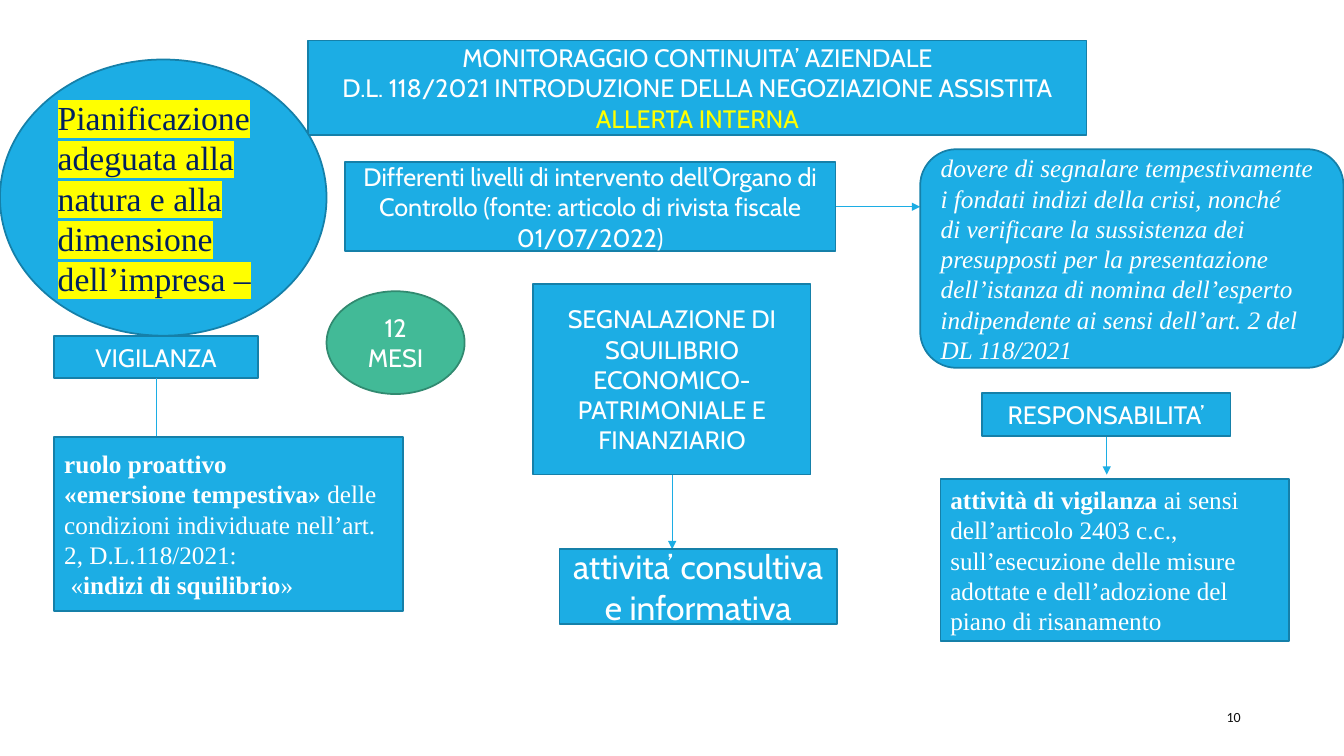
from lxml import etree
from pptx import Presentation
from pptx.dml.color import RGBColor
from pptx.enum import shapes, text
from pptx.oxml import ns
from pptx.util import Cm, Pt

BLUE = RGBColor(0x1C, 0xAD, 0xE4)
BLUE_EDGE = RGBColor(0x15, 0x80, 0xA9)
GREEN = RGBColor(0x42, 0xBA, 0x97)
GREEN_EDGE = RGBColor(0x31, 0x8A, 0x70)
WHITE = RGBColor(0xFF, 0xFF, 0xFF)
YELLOW = RGBColor(0xFF, 0xFF, 0x00)
NAVY = RGBColor(0x00, 0x20, 0x60)
INK = RGBColor(0x0D, 0x0D, 0x0D)

SANS, SERIF = "Cabin", "Times New Roman"
CENTER, LEFT = text.PP_ALIGN.CENTER, text.PP_ALIGN.LEFT
KIND = shapes.MSO_SHAPE


def write(sp, paragraphs, font=SANS, size=18, color=WHITE, align=CENTER, italic=False):
    """Each paragraph is a string, or a list of (text, bold) runs."""
    tf = sp.text_frame
    tf.word_wrap = True
    tf.auto_size = text.MSO_AUTO_SIZE.NONE
    tf.vertical_anchor = text.MSO_ANCHOR.MIDDLE
    for i, runs in enumerate(paragraphs):
        p = tf.add_paragraph() if i else tf.paragraphs[0]
        p.alignment = align
        p.font.name, p.font.size = font, Pt(size)
        p.font.italic = italic
        p.font.color.rgb = color
        for words, bold in [(runs, False)] if isinstance(runs, str) else runs:
            r = p.add_run()
            r.text = words
            if bold:
                r.font.bold = True


def paint(sp, fill=BLUE, edge=BLUE_EDGE):
    sp.fill.solid()
    sp.fill.fore_color.rgb = fill
    sp.line.color.rgb = edge
    sp.line.width = Pt(1.25)


def place(sp, box):
    sp.left, sp.top, sp.width, sp.height = map(Cm, box)


def add_box(slide, box, paragraphs, kind=KIND.RECTANGLE, fill=BLUE, edge=BLUE_EDGE, **style):
    sp = slide.shapes.add_shape(kind, *map(Cm, box))
    sp.shadow.inherit = False
    paint(sp, fill, edge)
    write(sp, paragraphs, **style)
    return sp


def add_arrow(slide, x1, y1, x2, y2):
    line = slide.shapes.add_connector(shapes.MSO_CONNECTOR.STRAIGHT, *map(Cm, (x1, y1, x2, y2)))
    line.line.color.rgb = BLUE
    line.line.width = Pt(0.75)
    etree.SubElement(line.line._get_or_add_ln(), ns.qn("a:tailEnd"), type="triangle")
    etree.SubElement(line._element.spPr, ns.qn("a:effectLst"))


def highlight(r, font_color, back):
    r.font.color.rgb = font_color
    mark = etree.Element(ns.qn("a:highlight"))
    etree.SubElement(mark, ns.qn("a:srgbClr"), val=str(back))
    r.font._element.find(ns.qn("a:solidFill")).addnext(mark)


def main():
    prs = Presentation()
    prs.slide_width, prs.slide_height = Cm(33.87), Cm(19.05)
    slide = prs.slides.add_slide(prs.slide_layouts[5])

    # Title band
    title = slide.shapes.title
    place(title, (7.77, 1.02, 19.61, 2.39))
    paint(title)
    write(title, [
        "MONITORAGGIO CONTINUITA’ AZIENDALE",
        "D.L. 118/2021 INTRODUZIONE DELLA NEGOZIAZIONE ASSISTITA",
        "ALLERTA INTERNA",
    ])
    title.text_frame.paragraphs[-1].font.color.rgb = YELLOW

    # Headings
    add_box(slide, (8.69, 4.09, 12.37, 2.24), [
        "Differenti livelli di intervento dell’Organo di Controllo "
        "(fonte: articolo di rivista fiscale 01/07/2022)"])
    add_box(slide, (1.37, 8.46, 5.13, 1.07), ["VIGILANZA"])
    add_box(slide, (13.44, 7.16, 6.99, 4.8), [
        "SEGNALAZIONE DI SQUILIBRIO ECONOMICO-PATRIMONIALE E FINANZIARIO"])
    add_box(slide, (24.74, 9.91, 6.27, 1.07), ["RESPONSABILITA’"])

    # Arrows, behind the boxes they lead to
    add_arrow(slide, 21.08, 5.21, 23.19, 5.21)
    add_arrow(slide, 3.94, 9.53, 3.94, 11.86)
    add_arrow(slide, 16.94, 11.96, 16.94, 13.84)
    add_arrow(slide, 27.89, 11, 27.89, 11.96)

    # Duties and roles
    add_box(slide, (23.19, 3.76, 10.67, 5.51), [
        "dovere di segnalare tempestivamente i fondati indizi della crisi, nonché",
        "di verificare la sussistenza dei presupposti per la presentazione "
        "dell’istanza di nomina dell’esperto",
        "indipendente ai sensi dell’art. 2 del DL 118/2021",
    ], kind=KIND.ROUNDED_RECTANGLE, font=SERIF, align=LEFT, italic=True)
    add_box(slide, (1.37, 11.02, 8.79, 4.37), [
        [("ruolo proattivo", True)],
        [("«emersione tempestiva»", True),
         (" delle condizioni individuate nell’art. 2, D.L.118/2021:", False)],
        [(" «", False), ("indizi di squilibrio", True), ("»", False)],
    ], font=SERIF, align=LEFT)
    add_box(slide, (14.1, 13.84, 6.99, 1.88), ["attivita’ consultiva e informativa"], size=24)
    add_box(slide, (23.7, 12.07, 8.79, 4.09), [
        [("attività di vigilanza ", True),
         ("ai sensi dell’articolo 2403 c.c., sull’esecuzione delle misure", False)],
        "adottate e dell’adozione del piano di risanamento",
    ], font=SERIF, align=LEFT)

    # Ovals
    planning = add_box(slide, (0, 1.5, 8.23, 6.96), [
        "Pianificazione adeguata alla natura e alla dimensione dell’impresa –",
    ], kind=KIND.OVAL, font=SERIF, size=24, color=NAVY, align=LEFT)
    highlight(planning.text_frame.paragraphs[0].runs[0], NAVY, YELLOW)
    add_box(slide, (8.23, 7.34, 3.48, 2.59), ["12 MESI"],
            kind=KIND.FLOWCHART_CONNECTOR, fill=GREEN, edge=GREEN_EDGE)

    # Page number
    number = slide.shapes.add_textbox(*map(Cm, (30.66, 17.37, 2.26, 1.4)))
    write(number, ["10"], font="Calibri", size=10, color=INK, align=LEFT)

    prs.save("out.pptx")


if __name__ == "__main__":
    main()
